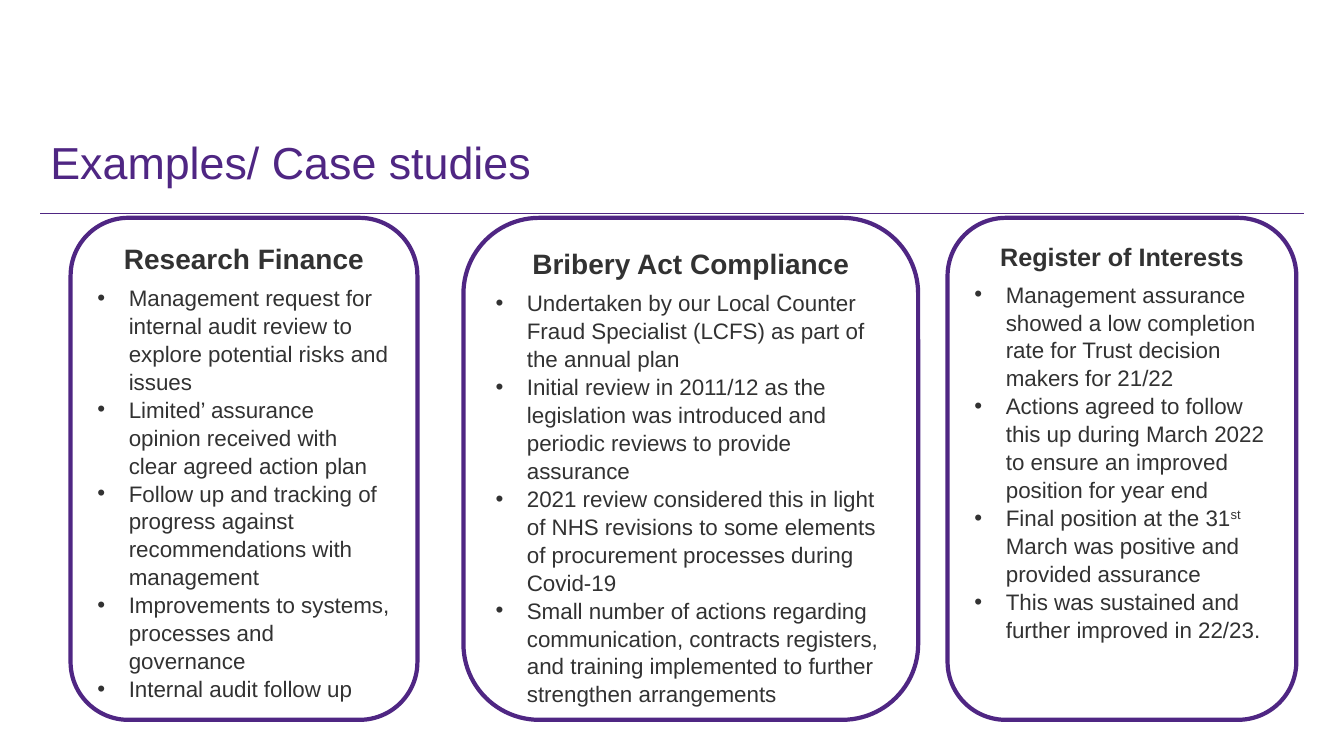
import pptx
import pptx.dml.color
import pptx.enum.shapes
import pptx.enum.text
import pptx.oxml.ns
import pptx.util
from lxml import etree

Cm = pptx.util.Cm
Pt = pptx.util.Pt
PURPLE = "4F2683"
TEXT = "323232"
WHITE = "FFFFFF"
SUPERSCRIPT = "30000"

CARDS = [
    (1.78, 8.74, "Research Finance", 20, [
        ["Management request for internal audit review to explore potential risks and issues"],
        ["Limited’ assurance opinion received with clear agreed action plan"],
        ["Follow up and tracking of progress against recommendations with management"],
        ["Improvements to systems, processes and governance"],
        ["Internal audit follow up"],
    ]),
    (11.68, 11.46, "Bribery Act Compliance", 20, [
        ["Undertaken by our Local Counter Fraud Specialist (LCFS) as part of the annual plan"],
        ["Initial review in 2011/12 as the legislation was introduced and periodic reviews "
         "to provide assurance"],
        ["2021 review considered this in light of NHS revisions to some elements of "
         "procurement processes during Covid-19"],
        ["Small number of actions regarding communication, contracts registers, and training "
         "implemented to further strengthen arrangements"],
    ]),
    (23.88, 8.79, "Register of Interests", 18, [
        ["Management assurance showed a low completion rate for Trust decision makers for 21/22"],
        ["Actions agreed to follow this up during March 2022 to ensure an improved position "
         "for year end"],
        ["Final position at the 31", "st", " March was positive and provided assurance"],
        ["This was sustained and further improved in 22/23."],
    ]),
]


def color(value):
    return pptx.dml.color.RGBColor.from_string(value)


def format_runs(paragraph, size, value, bold=False):
    for run in paragraph.runs:
        run.font.name = "Arial"
        run.font.size = Pt(size)
        run.font.bold = bold
        run.font.color.rgb = color(value)


def add_bullet(paragraph):
    properties = paragraph._p.get_or_add_pPr()
    properties.set("marL", str(Cm(0.79)))
    properties.set("indent", str(-Cm(0.79)))
    bullet_font = etree.SubElement(properties, pptx.oxml.ns.qn("a:buFont"))
    bullet_font.set("typeface", "Arial")
    bullet = etree.SubElement(properties, pptx.oxml.ns.qn("a:buChar"))
    bullet.set("char", "•")


def add_header(slide, left, top, width, height):
    box = slide.shapes.add_textbox(Cm(left), Cm(top), Cm(width), Cm(height))
    frame = box.text_frame
    frame.word_wrap = True
    frame.vertical_anchor = pptx.enum.text.MSO_ANCHOR.BOTTOM
    frame.text = "Examples/ Case studies"
    format_runs(frame.paragraphs[0], 32, PURPLE)

    rule_top = Cm(top + height + 0.5)
    rule = slide.shapes.add_connector(
        pptx.enum.shapes.MSO_CONNECTOR.STRAIGHT,
        Cm(left), rule_top, Cm(left + width), rule_top)
    rule.line.color.rgb = color(PURPLE)
    rule.line.width = Pt(0.5)
    etree.SubElement(rule._element.spPr, pptx.oxml.ns.qn("a:effectLst"))


def add_card(slide, left, top, width, height, heading, heading_size, points):
    card = slide.shapes.add_shape(
        pptx.enum.shapes.MSO_SHAPE.ROUNDED_RECTANGLE,
        Cm(left), Cm(top), Cm(width), Cm(height))
    card.shadow.inherit = False
    card.fill.solid()
    card.fill.fore_color.rgb = color(WHITE)
    card.line.color.rgb = color(PURPLE)
    card.line.width = Pt(3)

    frame = card.text_frame
    frame.word_wrap = True
    frame.vertical_anchor = pptx.enum.text.MSO_ANCHOR.TOP
    frame.text = heading
    title = frame.paragraphs[0]
    title.alignment = pptx.enum.text.PP_ALIGN.CENTER
    title.line_spacing = 1.04
    title.space_after = Pt(6)
    format_runs(title, heading_size, TEXT, bold=True)

    for pieces in points:
        paragraph = frame.add_paragraph()
        paragraph.alignment = pptx.enum.text.PP_ALIGN.LEFT
        paragraph.line_spacing = 1.04
        add_bullet(paragraph)
        for piece in pieces:
            paragraph.add_run().text = piece
        format_runs(paragraph, 16, TEXT)
        for ordinal in paragraph.runs[1:2]:
            ordinal.font._element.set("baseline", SUPERSCRIPT)


def main():
    presentation = pptx.Presentation()
    presentation.slide_width = Cm(33.87)
    presentation.slide_height = Cm(19.05)
    slide = presentation.slides.add_slide(presentation.slide_layouts[6])
    add_header(slide, 1.02, 2.84, 31.83, 2.03)
    for left, width, heading, heading_size, points in CARDS:
        add_card(slide, left, 5.49, width, 12.65, heading, heading_size, points)
    presentation.save("out.pptx")


if __name__ == "__main__":
    main()
